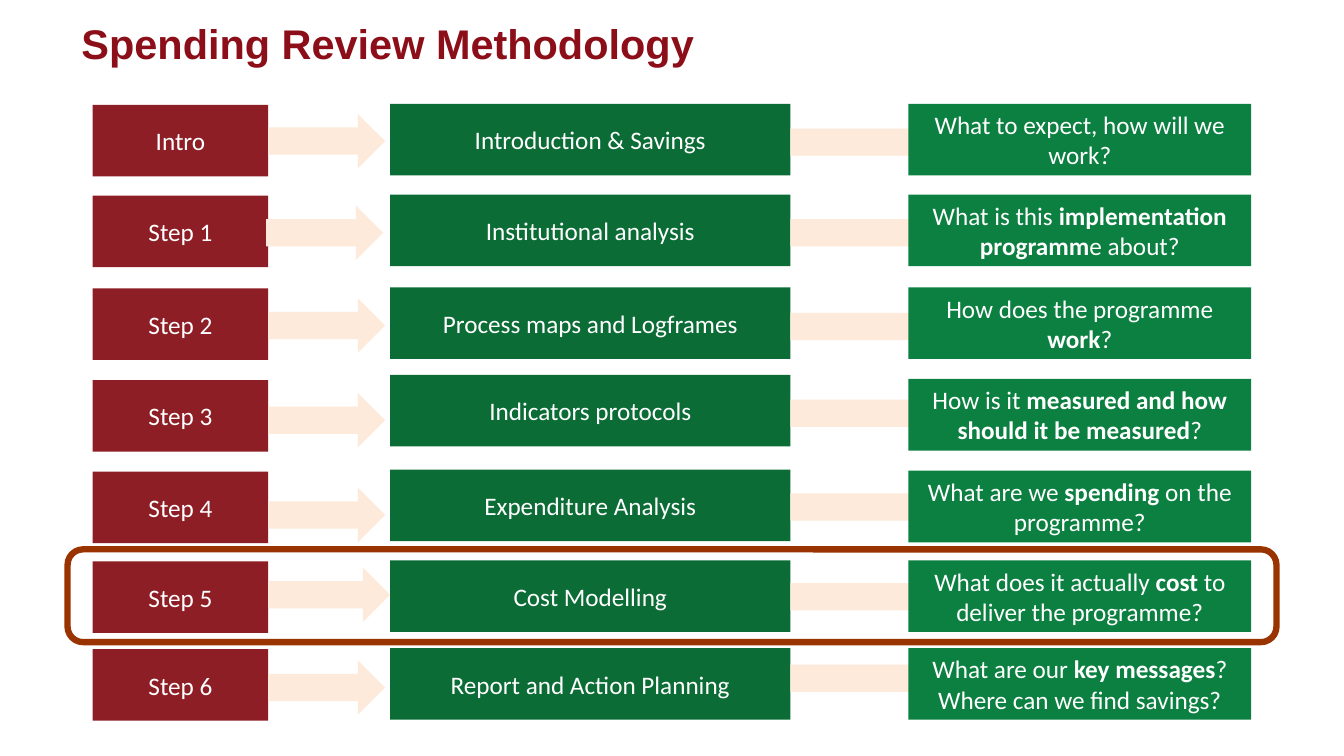
from dataclasses import dataclass

from pptx import Presentation
from pptx.dml.color import RGBColor
from pptx.enum.shapes import MSO_SHAPE as Shape
from pptx.enum.text import MSO_ANCHOR as Anchor, PP_ALIGN as Align
from pptx.util import Inches, Pt


@dataclass(frozen=True)
class Theme:
    title: str = "8B0E18"
    step: str = "8E1E25"
    topic: str = "0B6C36"
    question: str = "0C8041"
    arrow: str = "FDEADA"
    highlight: str = "993300"
    text: str = "FFFFFF"
    title_font: str = "Arial"
    body_font: str = "Calibri"
    title_size: float = 29.6
    body_size: float = 18
    highlight_width: float = 4.5


@dataclass(frozen=True)
class Row:
    top: float
    step: str
    topic: str
    question: tuple  # plain and bold spans alternate, plain first
    # vertical offsets from the top of the row
    step_arrow: float
    topic_arrow: float
    topic_shift: float = 0
    # changes to the arrow between step and topic
    arrow_shift: float = 0
    arrow_stretch: float = 0


THEME = Theme()
ROW_HEIGHT = 0.71
ARROW_HEIGHT = 0.54
STEP_LEFT, STEP_WIDTH = 0.92, 1.74
TOPIC_LEFT, TOPIC_WIDTH = 3.87, 3.97
QUESTION_LEFT, QUESTION_WIDTH = 9.01, 3.4

ROWS = [
    Row(1.03, "Intro", "Introduction & Savings",
        ("What to expect, how will we work?",), 0.10, 0.11),
    Row(1.93, "Step 1", "Institutional analysis",
        ("What is this ", "implementation programm", "e about?"),
        0.11, 0.11, arrow_shift=-0.02),
    Row(2.85, "Step 2", "Process maps and Logframes",
        ("How does the programme ", "work", "?"), 0.11, 0.12),
    Row(3.76, "Step 3", "Indicators protocols",
        ("How is it ", "measured and how should it be measured", "?"),
        0.14, 0.07, topic_shift=-0.04),
    Row(4.67, "Step 4", "Expenditure Analysis",
        ("What are we ", "spending ", "on the programme?"),
        0.17, 0.09, topic_shift=-0.01),
    Row(5.56, "Step 5", "Cost Modelling",
        ("What does it actually ", "cost", " to deliver the programme?"),
        0.07, 0.09, arrow_stretch=0.05),
    Row(6.43, "Step 6", "Report and Action Planning",
        ("What are our ", "key messages", "? Where can we find savings?"),
        0.12, 0.03),
]


def color(value):
    return RGBColor.from_string(value)


def write(shape, spans, *, size=THEME.body_size, font=THEME.body_font,
          fill=THEME.text, align=Align.CENTER, bold=False):
    """Write spans that alternate between the given weight and bold."""
    frame = shape.text_frame
    frame.word_wrap = True
    frame.vertical_anchor = Anchor.MIDDLE
    para = frame.paragraphs[0]
    para.alignment = align
    for index, words in enumerate(spans):
        span = para.add_run()
        span.text = words
        span.font.size = Pt(size)
        span.font.name = font
        span.font.bold = bold or index % 2 == 1
        span.font.color.rgb = color(fill)


def add_block(page, kind, box, fill=None):
    shape = page.shapes.add_shape(kind, *map(Inches, box))
    shape.shadow.inherit = False
    shape.line.fill.background()
    if fill:
        shape.fill.solid()
        shape.fill.fore_color.rgb = color(fill)
    else:
        shape.fill.background()
    return shape


def add_title(page, box, words):
    title = page.shapes.add_textbox(*map(Inches, box))
    write(title, (words,), size=THEME.title_size, font=THEME.title_font,
          fill=THEME.title, align=Align.LEFT, bold=True)


def add_row(page, row):
    # Step and topic
    step = add_block(page, Shape.RECTANGLE,
                     (STEP_LEFT, row.top + 0.01, STEP_WIDTH, ROW_HEIGHT), THEME.step)
    write(step, (row.step,))
    topic = add_block(page, Shape.RECTANGLE,
                      (TOPIC_LEFT, row.top + row.topic_shift, TOPIC_WIDTH, ROW_HEIGHT),
                      THEME.topic)
    write(topic, (row.topic,))

    # Arrows; the question covers the head of the second
    add_block(page, Shape.RIGHT_ARROW,
              (STEP_LEFT + STEP_WIDTH + row.arrow_shift, row.top + row.step_arrow,
               1.16 + row.arrow_stretch, ARROW_HEIGHT), THEME.arrow)
    add_block(page, Shape.RIGHT_ARROW,
              (TOPIC_LEFT + TOPIC_WIDTH, row.top + row.topic_arrow,
               1.56, ARROW_HEIGHT), THEME.arrow)

    # Question
    question = add_block(page, Shape.RECTANGLE,
                         (QUESTION_LEFT, row.top, QUESTION_WIDTH, ROW_HEIGHT),
                         THEME.question)
    write(question, row.question)


def add_highlight(page, box):
    frame = add_block(page, Shape.ROUNDED_RECTANGLE, box)
    frame.line.color.rgb = color(THEME.highlight)
    frame.line.width = Pt(THEME.highlight_width)


def main():
    deck = Presentation()
    deck.slide_width, deck.slide_height = Inches(13.33), Inches(7.5)
    page = deck.slides.add_slide(deck.slide_layouts[6])
    add_title(page, (0.71, 0.2, 11.51, 0.45), "Spending Review Methodology")
    for row in ROWS:
        add_row(page, row)
    add_highlight(page, (0.67, 5.45, 11.99, 0.92))
    deck.save("out.pptx")


if __name__ == "__main__":
    main()
